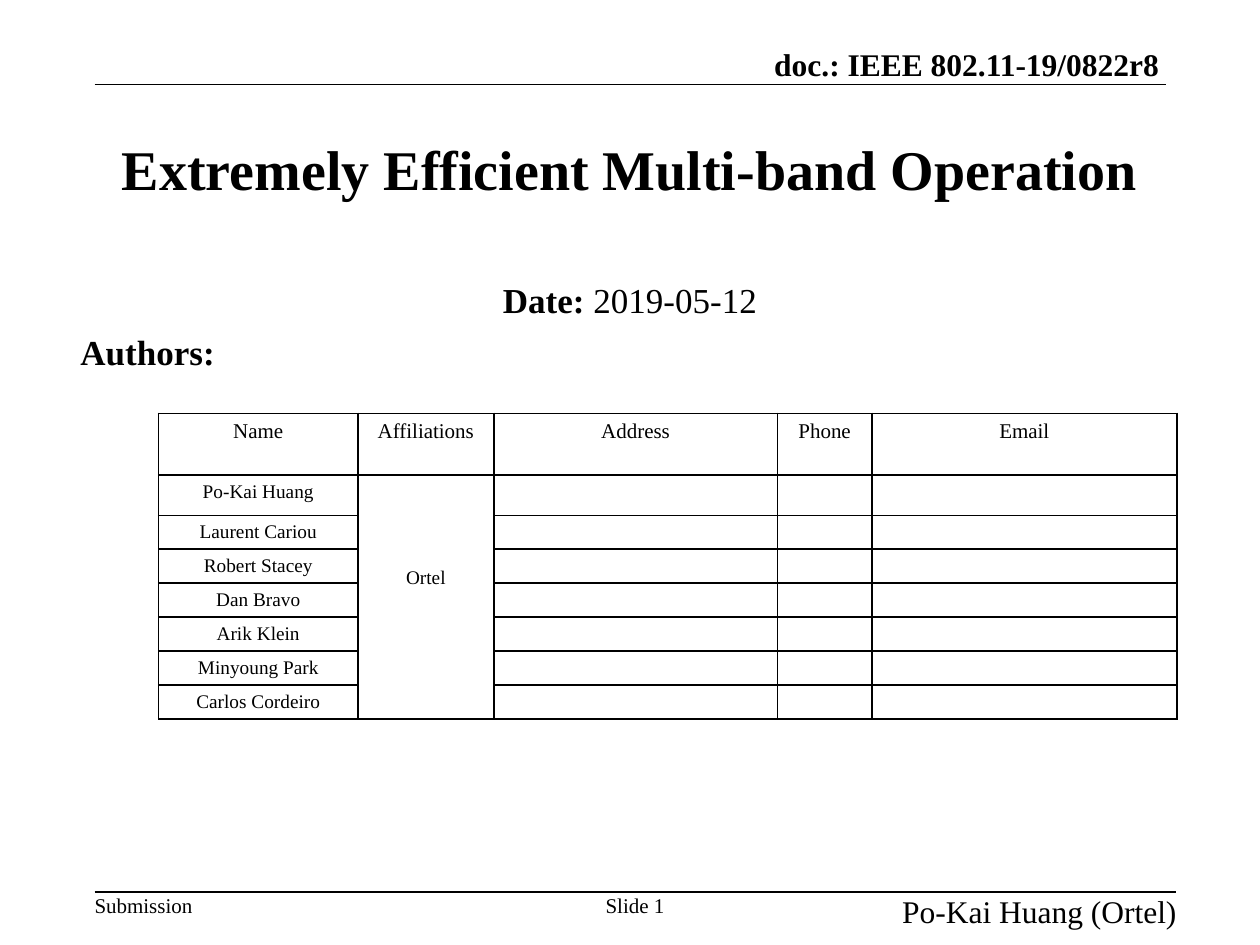
from lxml import etree
from pptx import Presentation, util as u
from pptx.dml.color import RGBColor
from pptx.enum import shapes, text
from pptx.oxml import ns

THEME = {
    "font": "Times New Roman", "ink": RGBColor(0, 0, 0), "rule": 1,
    "title": 32, "body": 20, "label": 18, "small": 12, "cell": 11,
}
L, C, R = text.PP_ALIGN.LEFT, text.PP_ALIGN.CENTER, text.PP_ALIGN.RIGHT
TOP, MIDDLE, BOTTOM = (text.MSO_ANCHOR.TOP, text.MSO_ANCHOR.MIDDLE,
                       text.MSO_ANCHOR.BOTTOM)

# box, alignment, anchor, size, runs as (text, bold)
CONTENT = [
    ((0.75, 0.75, 8.5, 1.17), C, MIDDLE, "title",
     [("Extremely Efficient Multi-band Operation", True)]),
    ((0.75, 2.16, 8.5, 0.42), C, TOP, "body",
     [("Date:", True), (" 2019-05-12", False)]),
    ((0.54, 2.57, 1.58, 0.42), L, TOP, "body", [("Authors:", True)]),
]
HEADER_FOOTER = [
    ((5.61, 0.36, 3.59, 0.3), R, BOTTOM, "label",
     [("doc.: IEEE 802.11-19/0822r8", True)]),
    ((0.75, 7.08, 0.79, 0.2), L, TOP, "small", [("Submission", False)]),
    ((4.75, 7.08, 0.58, 0.2), C, TOP, "small", [("Slide 1", False)]),
    ((7.04, 7.08, 2.3, 0.3), R, TOP, "label",
     [("Po-Kai Huang (Ortel)", False)]),
]
RULES = [(0.75, 9.25, 0.67), (0.75, 9.33, 7.08)]  # left, right, y

COLUMNS = [("Name", 1.58), ("Affiliations", 1.08), ("Address", 2.25),
           ("Phone", 0.75), ("Email", 2.42)]
AUTHORS = ["Po-Kai Huang", "Laurent Cariou", "Robert Stacey", "Dan Bravo",
           "Arik Klein", "Minyoung Park", "Carlos Cordeiro"]
AFFILIATION = "Ortel"
TABLE_AT = (1.26, 3.28)
ROW_HEIGHTS = [0.49, 0.32] + [0.27] * (len(AUTHORS) - 1)


def add_runs(p, runs, size, align):
    p.alignment = align
    for words, bold in runs:
        r = p.add_run()
        r.text = words
        r.font.name, r.font.size = THEME["font"], u.Pt(THEME[size])
        r.font.bold = bold
        r.font.color.rgb = THEME["ink"]


def add_text(s, box, align, anchor, size, runs, tight=False):
    """Add a text box; a tight one has no margins and does not wrap."""
    tf = s.shapes.add_textbox(*map(u.Inches, box)).text_frame
    tf.word_wrap = not tight
    tf.vertical_anchor = anchor
    if tight:
        tf.auto_size = text.MSO_AUTO_SIZE.SHAPE_TO_FIT_TEXT
        tf.margin_left = tf.margin_right = tf.margin_top = tf.margin_bottom = 0
    add_runs(tf.paragraphs[0], runs, size, align)


def add_rule(s, left, right, y):
    line = s.shapes.add_connector(shapes.MSO_CONNECTOR.STRAIGHT,
                                  *map(u.Inches, (left, y, right, y)))
    line.line.color.rgb, line.line.width = THEME["ink"], u.Pt(THEME["rule"])
    etree.SubElement(line._element.spPr, ns.qn("a:effectLst"))


def style_cell(cell):
    """Draw all four borders and leave the cell unfilled."""
    cell.fill.background()
    cell.margin_bottom = u.Inches(0.03)
    tcPr = cell._tc.get_or_add_tcPr()
    for i, side in enumerate(("lnL", "lnR", "lnT", "lnB")):
        ln = etree.Element(ns.qn("a:" + side), w=str(u.Pt(THEME["rule"])))
        fill = etree.SubElement(ln, ns.qn("a:solidFill"))
        etree.SubElement(fill, ns.qn("a:srgbClr"), val=str(THEME["ink"]))
        tcPr.insert(i, ln)


def fill_cell(cell, words, size):
    p = cell.text_frame.paragraphs[0]
    if words:
        add_runs(p, [(words, False)], size, C)
    else:  # the end mark's size keeps an empty row low
        etree.SubElement(p._p, ns.qn("a:endParaRPr"), sz=str(THEME[size] * 100))


def add_authors(s):
    rows = [[name for name, _ in COLUMNS]]
    rows += [[author, "", "", "", ""] for author in AUTHORS]
    rows[1][1] = AFFILIATION
    widths = [width for _, width in COLUMNS]
    size = (sum(widths), sum(ROW_HEIGHTS))
    table = s.shapes.add_table(len(rows), len(COLUMNS),
                               *map(u.Inches, TABLE_AT + size)).table
    table.first_row = table.horz_banding = False
    for column, width in zip(table.columns, widths):
        column.width = u.Inches(width)
    for i, (values, height) in enumerate(zip(rows, ROW_HEIGHTS)):
        table.rows[i].height = u.Inches(height)
        for j, words in enumerate(values):
            style_cell(table.cell(i, j))
            fill_cell(table.cell(i, j), words, "cell" if i else "small")
    shared = table.cell(1, 1)
    shared.merge(table.cell(len(AUTHORS), 1))
    shared.vertical_anchor = MIDDLE
    shared.margin_bottom = u.Inches(0.36)


def main():
    prs = Presentation()
    prs.slide_width, prs.slide_height = u.Inches(10), u.Inches(7.5)
    s = prs.slides.add_slide(prs.slide_layouts[6])
    for rule in RULES:
        add_rule(s, *rule)
    for item in HEADER_FOOTER:
        add_text(s, *item, tight=True)
    for item in CONTENT:
        add_text(s, *item)
    add_authors(s)
    prs.save("out.pptx")


if __name__ == "__main__":
    main()
